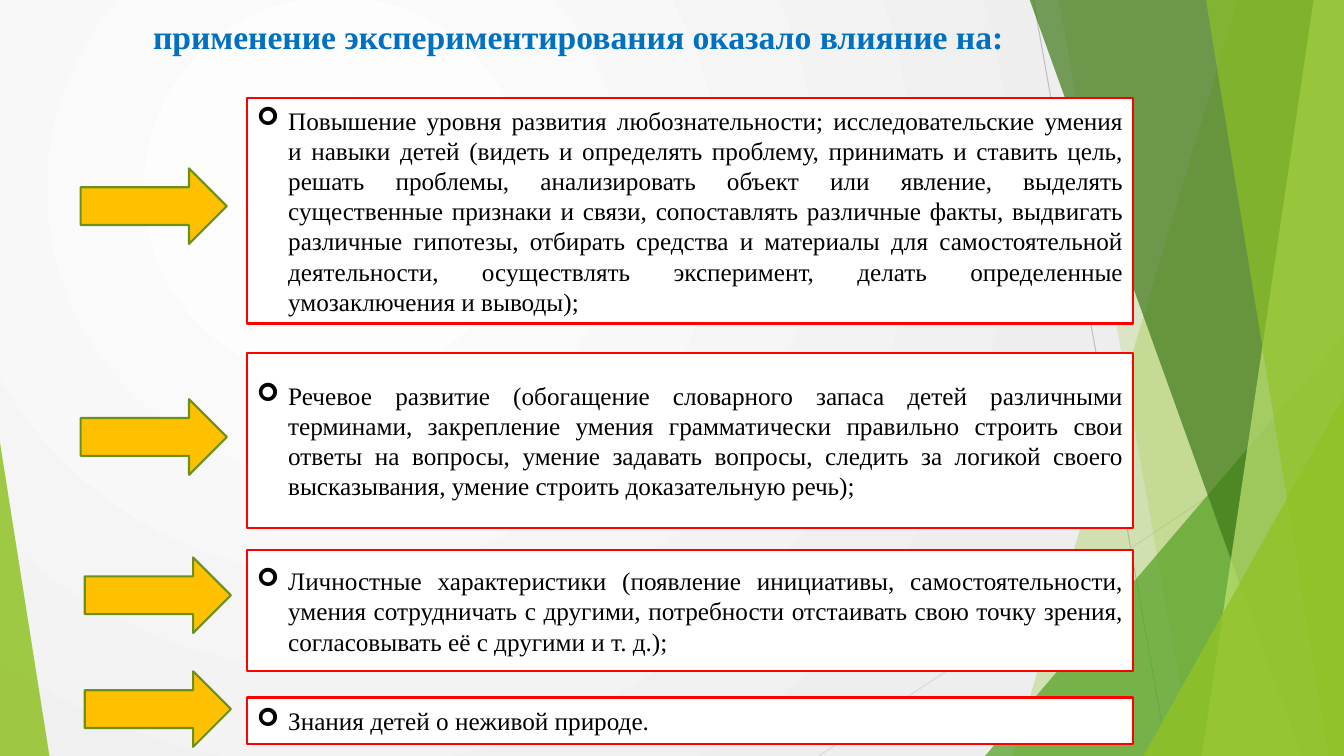
from lxml import etree
from pptx import Presentation
from pptx.dml.color import RGBColor
from pptx.enum import shapes, text
from pptx.oxml.ns import qn
from pptx.util import Pt

PX = 9144  # EMU per px, 100 px to the inch
WIDTH, HEIGHT = 1333, 750
FONT = "Times New Roman"
COLORS = {
    "white": "FFFFFF", "mist": "EEEEEE", "black": "000000",
    "title": "0070C0", "frame": "FF0000",
    "arrow": "FFC000", "arrow_edge": "6B901C",
    "lime": "90C226", "green": "54A021", "forest": "3F7819", "pale": "C0E474",
    "ray": "BFBFBF", "faint_ray": "D9D9D9",
}

# Top, height, statement, arrow left, arrow top
OUTCOMES = [
    (97, 224, "Повышение уровня развития любознательности; исследовательские умения и навыки "
     "детей (видеть и определять проблему, принимать и ставить цель, решать проблемы, "
     "анализировать объект или явление, выделять существенные признаки и связи, сопоставлять "
     "различные факты, выдвигать различные гипотезы, отбирать средства и материалы для "
     "самостоятельной деятельности, осуществлять эксперимент, делать определенные "
     "умозаключения и выводы);", 80, 167),
    (350, 174, "Речевое развитие (обогащение словарного запаса детей различными терминами, "
     "закрепление умения грамматически правильно строить свои ответы на вопросы, умение "
     "задавать вопросы, следить за логикой своего высказывания, умение строить "
     "доказательную речь);", 80, 396),
    (546, 120, "Личностные характеристики (появление инициативы, самостоятельности, умения "
     "сотрудничать с другими, потребности отстаивать свою точку зрения, согласовывать её "
     "с другими и т. д.);", 84, 553),
    (692, 46, "Знания детей о неживой природе.", 84, 666),
]


def rgb(name):
    return RGBColor.from_string(COLORS[name])


def px(*lengths):
    return [length * PX for length in lengths]


def paint(shape, fill, edge=None, opacity=100):
    shape.shadow.inherit = False
    shape.fill.solid()
    shape.fill.fore_color.rgb = rgb(fill)
    if opacity < 100:
        tint = shape.fill._xPr.find(f".//{qn('a:srgbClr')}")
        etree.SubElement(tint, qn("a:alpha"), val=str(opacity * 1000))
    if edge:
        shape.line.color.rgb = rgb(edge)
        shape.line.width = Pt(1.5)
    else:
        shape.line.fill.background()


def write(shape, words, align, **font_values):
    frame = shape.text_frame
    frame.word_wrap = True
    paragraph = frame.paragraphs[0]
    paragraph.alignment = align
    run = paragraph.add_run()
    run.text = words
    run.font.color.rgb = rgb(font_values.pop("color"))
    for name, value in {"name": FONT, **font_values}.items():
        setattr(run.font, name, value)
    return paragraph


def draw_background(slide):
    fill = slide.background.fill
    fill.gradient()
    for stop, color, position in zip(fill.gradient_stops, ("white", "mist"), (0, 1)):
        stop.color.rgb = rgb(color)
        stop.position = position
    gradient = slide._element.find(f".//{qn('a:gradFill')}")
    gradient.remove(gradient.find(qn("a:lin")))
    glow = etree.SubElement(gradient, qn("a:path"), path="circle")
    etree.SubElement(glow, qn("a:fillToRect"), l="50000", t="50000", r="100000", b="100000")


def draw_facets(slide, right, bottom):
    # Thin rays
    for ends, color in [((1025, 0, 1158, bottom), "ray"),
                        ((right, 403, 812, bottom), "faint_ray")]:
        ray = slide.shapes.add_connector(shapes.MSO_CONNECTOR.STRAIGHT, *px(*ends))
        ray.line.color.rgb = rgb(color)
        ray.line.width = Pt(0.75)
        etree.SubElement(ray._element.spPr, qn("a:effectLst"))

    def blade(top_x, bottom_x, color, opacity):
        outline = slide.shapes.build_freeform(top_x, -1, scale=PX)
        outline.add_line_segments([(right, -1), (right, bottom), (bottom_x, bottom)])
        paint(outline.convert_to_shape(), color, opacity=opacity)

    def corner(left, top, width, apex, color, opacity):
        triangle = slide.shapes.add_shape(shapes.MSO_SHAPE.ISOSCELES_TRIANGLE,
                                          *px(left, top, width, bottom - top))
        triangle.adjustments[0] = apex
        paint(triangle, color, opacity=opacity)

    # Overlapping facets, back to front
    blade(1228, 1004, "lime", 30)
    blade(1050, 1183, "lime", 20)
    corner(977, 333, right - 977, 1, "green", 72)
    blade(1021, 1291, "forest", 70)
    blade(1303, 1192, "pale", 70)
    blade(1196, 1318, "lime", 65)
    corner(1134, 393, right - 1134, 1, "lime", 80)
    corner(0, 439, 49, 0, "lime", 85)


def draw_title(slide, left, top, width, height):
    title = slide.shapes.add_textbox(*px(left, top, width, height))
    write(title, "применение экспериментирования оказало влияние на:",
          text.PP_ALIGN.CENTER, color="title", size=Pt(24), bold=True)


def draw_outcome(slide, left, top, width, height, statement):
    box = slide.shapes.add_shape(shapes.MSO_SHAPE.RECTANGLE, *px(left, top, width, height))
    paint(box, "white", "frame")
    box.text_frame.vertical_anchor = text.MSO_ANCHOR.MIDDLE
    paragraph = write(box, statement, text.PP_ALIGN.JUSTIFY, color="black", size=Pt(18))
    # Hanging arrowhead bullet
    properties = paragraph._p.get_or_add_pPr()
    properties.set("marL", str(31 * PX))
    properties.set("indent", str(-31 * PX))
    etree.SubElement(properties, qn("a:buFont"), typeface="Wingdings")
    etree.SubElement(properties, qn("a:buChar"), char="➢")


def draw_arrow(slide, left, top, width=145, height=75):
    arrow = slide.shapes.add_shape(shapes.MSO_SHAPE.RIGHT_ARROW, *px(left, top, width, height))
    paint(arrow, "arrow", "arrow_edge")


def main():
    deck = Presentation()
    deck.slide_width, deck.slide_height = px(WIDTH, HEIGHT)
    slide = deck.slides.add_slide(deck.slide_layouts[6])
    draw_background(slide)
    draw_facets(slide, WIDTH, HEIGHT)
    draw_title(slide, 134, 11, 879, 50)
    for top, height, statement, _, _ in OUTCOMES:
        draw_outcome(slide, 245, top, 879, height, statement)
    for _, _, _, arrow_left, arrow_top in OUTCOMES:
        draw_arrow(slide, arrow_left, arrow_top)
    deck.save("out.pptx")


if __name__ == "__main__":
    main()
